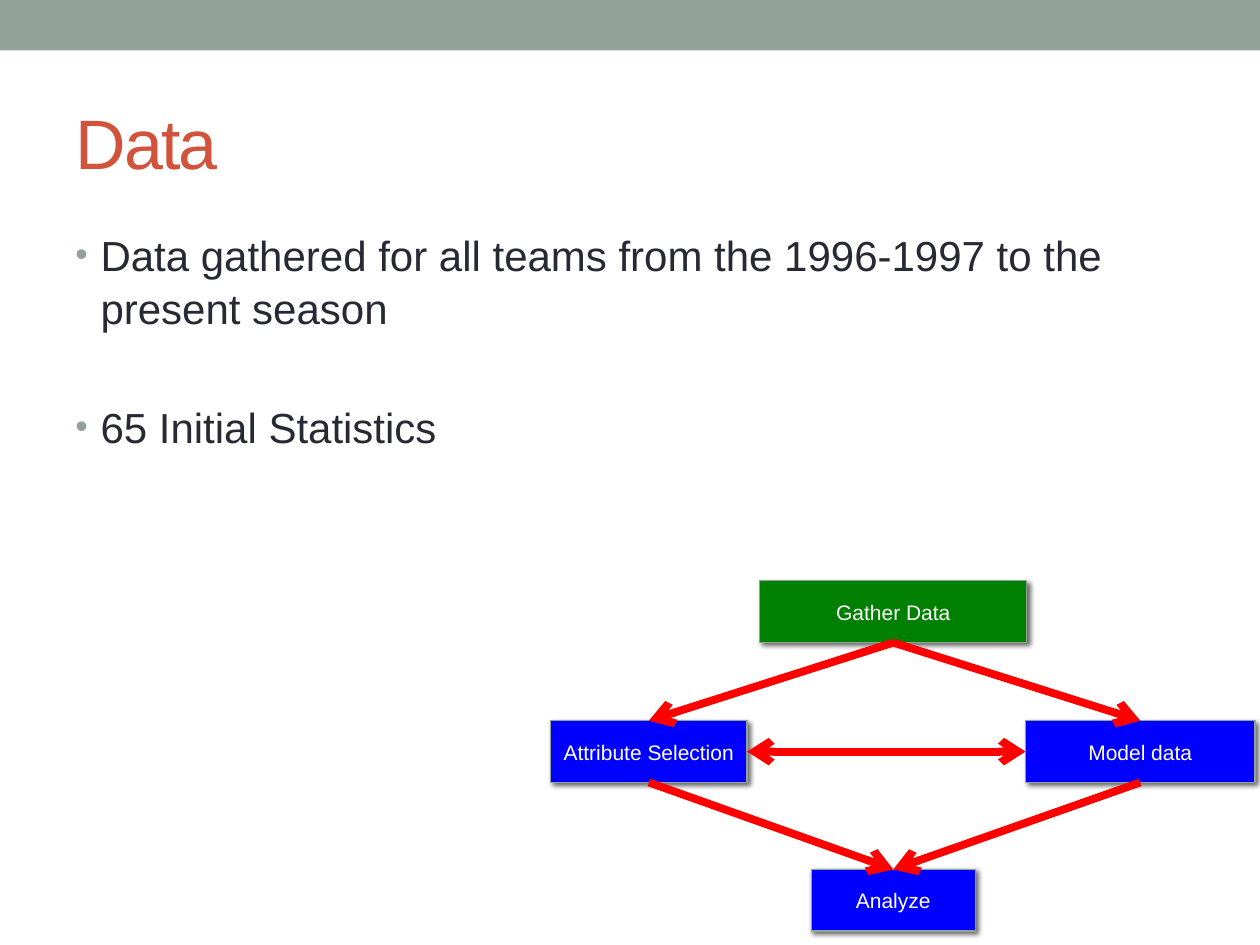
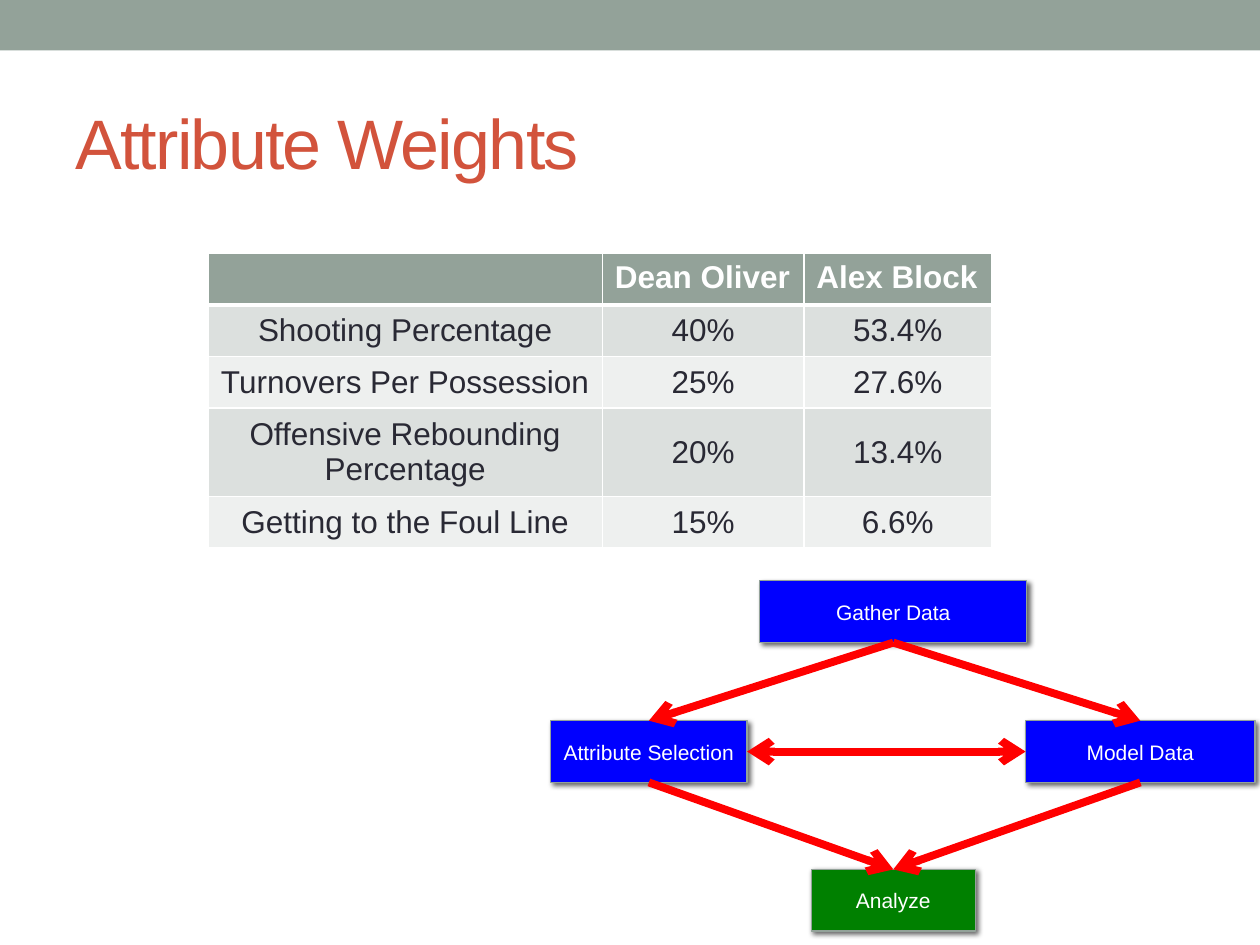
from dataclasses import dataclass
from typing import Any

from lxml import etree
from pptx import Presentation
from pptx.dml.color import RGBColor
from pptx.enum.shapes import MSO_CONNECTOR, MSO_SHAPE
from pptx.enum.text import MSO_ANCHOR, PP_ALIGN
from pptx.oxml.ns import qn
from pptx.util import Pt

EMU_PER_PX = 9144
FONT_NAME = "Arial"
RECTANGLE = MSO_SHAPE.RECTANGLE
STRAIGHT = MSO_CONNECTOR.STRAIGHT
TOP_ANCHOR = MSO_ANCHOR.TOP
MIDDLE = MSO_ANCHOR.MIDDLE
LEFT_ALIGN = PP_ALIGN.LEFT
CENTER = PP_ALIGN.CENTER
TOP, LEFT, BOTTOM, RIGHT = range(4)

COLORS = {
    "sage": "93A299",
    "title": "D2533C",
    "text": "292934",
    "white": "FFFFFF",
    "blue": "0000FF",
    "green": "008000",
    "red": "FF0000",
    "black": "000000",
    "band_dark": "DCE0DE",
    "band_light": "EEF0EF",
}

TITLE_FONT = {"name": FONT_NAME, "size": Pt(40)}
BODY_FONT = {"name": FONT_NAME, "size": Pt(24)}
STEP_FONT = {"name": FONT_NAME, "size": Pt(12)}
HEADER_FONT = {"name": FONT_NAME, "size": Pt(18), "bold": True}
CELL_FONT = {"name": FONT_NAME, "size": Pt(18), "bold": False}


@dataclass(frozen=True)
class Box:
    left: int
    top: int
    width: int
    height: int

    def emu(self) -> list[int]:
        return [px(value) for value in (self.left, self.top, self.width, self.height)]


@dataclass(frozen=True)
class Step:
    key: str
    label: str
    box: Box


@dataclass(frozen=True)
class Arrow:
    start: str
    start_side: int
    end: str
    end_side: int
    both_ends: bool = False


BAND_BOX = Box(0, 0, 1000, 40)
TITLE_BOX = Box(50, 58, 900, 108)
BODY_BOX = Box(50, 175, 900, 533)
TABLE_LEFT, TABLE_TOP = 165, 201
COLUMN_WIDTHS = (313, 160, 149)
ROW_HEIGHT = 41

STEPS = (
    Step("gather", "Gather Data", Box(603, 461, 212, 49)),
    Step("select", "Attribute Selection", Box(437, 572, 156, 49)),
    Step("model", "Model Data", Box(814, 572, 182, 49)),
    Step("analyze", "Analyze", Box(644, 690, 130, 49)),
)
ARROWS = (
    Arrow("gather", BOTTOM, "select", TOP),
    Arrow("gather", BOTTOM, "model", TOP),
    Arrow("select", RIGHT, "model", LEFT, both_ends=True),
    Arrow("select", BOTTOM, "analyze", TOP),
    Arrow("model", BOTTOM, "analyze", TOP),
)
BULLETS = (
    "Data gathered for all teams from the 1996-1997 to the present season",
    "65 Initial Statistics",
)
WEIGHTS = (
    ("", "Dean Oliver", "Alex Block"),
    ("Shooting Percentage", "40%", "53.4%"),
    ("Turnovers Per Possession", "25%", "27.6%"),
    ("Offensive Rebounding Percentage", "20%", "13.4%"),
    ("Getting to the Foul Line", "15%", "6.6%"),
)


def px(value: int) -> int:
    return value * EMU_PER_PX


def rgb(color: str) -> RGBColor:
    return RGBColor.from_string(COLORS[color])


def add_element(parent: Any, tag: str, **attributes: Any) -> Any:
    values = {name: str(value) for name, value in attributes.items()}
    return etree.SubElement(parent, qn(tag), values)


def set_values(target: Any, values: dict[str, Any]) -> None:
    for name, value in values.items():
        setattr(target, name, value)


def write_text(paragraph: Any, text: str, font: dict[str, Any], color: str) -> Any:
    run = paragraph.add_run()
    run.text = text
    set_values(run.font, font)
    run.font.color.rgb = rgb(color)
    return run


def add_rectangle(slide: Any, box: Box, fill: str) -> Any:
    shape = slide.shapes.add_shape(RECTANGLE, *box.emu())
    shape.shadow.inherit = False
    shape.fill.solid()
    shape.fill.fore_color.rgb = rgb(fill)
    shape.line.fill.background()
    return shape


def add_text_frame(slide: Any, box: Box, anchor: Any) -> Any:
    frame = slide.shapes.add_textbox(*box.emu()).text_frame
    set_values(frame, {"word_wrap": True, "vertical_anchor": anchor})
    return frame


def add_titled_slide(presentation: Any, title: str) -> Any:
    slide = presentation.slides.add_slide(presentation.slide_layouts[6])
    add_rectangle(slide, BAND_BOX, "sage")
    frame = add_text_frame(slide, TITLE_BOX, MIDDLE)
    run = write_text(frame.paragraphs[0], title, TITLE_FONT, "title")
    run.font._element.set("spc", "-100")
    return slide


def add_bullets(slide: Any) -> None:
    frame = add_text_frame(slide, BODY_BOX, TOP_ANCHOR)
    for index, text in enumerate(BULLETS):
        paragraph = frame.add_paragraph() if index else frame.paragraphs[0]
        spacing = {"line_spacing": 1.05, "space_before": Pt(38 if index else 0)}
        set_values(paragraph, spacing)
        properties = paragraph._p.get_or_add_pPr()
        properties.set("marL", str(px(20)))
        properties.set("indent", str(px(-20)))
        bullet_color = add_element(properties, "a:buClr")
        add_element(bullet_color, "a:srgbClr", val=COLORS["sage"])
        add_element(properties, "a:buSzPct", val=85000)
        add_element(properties, "a:buFont", typeface=FONT_NAME)
        add_element(properties, "a:buChar", char="•")
        write_text(paragraph, text, BODY_FONT, "text")


def add_step(slide: Any, step: Step, label: str, fill: str) -> Any:
    shape = add_rectangle(slide, step.box, fill)
    shape.line.color.rgb = rgb("sage")
    shape.line.width = Pt(0.75)
    effects = shape._element.spPr.find(qn("a:effectLst"))
    shadow = add_element(
        effects, "a:outerShdw", blurRad=Pt(3), dist=Pt(2), dir=45 * 60000, rotWithShape=0
    )
    shadow_color = add_element(shadow, "a:srgbClr", val=COLORS["black"])
    add_element(shadow_color, "a:alpha", val=60000)
    frame = shape.text_frame
    set_values(frame, {"word_wrap": True, "vertical_anchor": MIDDLE})
    frame.paragraphs[0].alignment = CENTER
    write_text(frame.paragraphs[0], label, STEP_FONT, "white")
    return shape


def add_arrow(slide: Any, arrow: Arrow, shapes: dict[str, Any]) -> None:
    connector = slide.shapes.add_connector(STRAIGHT, 0, 0, 0, 0)
    connector.begin_connect(shapes[arrow.start], arrow.start_side)
    connector.end_connect(shapes[arrow.end], arrow.end_side)
    connector.line.color.rgb = rgb("red")
    connector.line.width = Pt(4.5)
    line = connector.line._get_or_add_ln()
    if arrow.both_ends:
        add_element(line, "a:headEnd", type="arrow")
    add_element(line, "a:tailEnd", type="arrow")
    add_element(connector._element.spPr, "a:effectLst")


def add_process(slide: Any, active: str, labels: dict[str, str]) -> None:
    shapes = {}
    for step in STEPS:
        fill = "green" if step.key == active else "blue"
        shapes[step.key] = add_step(slide, step, labels.get(step.key, step.label), fill)
    for arrow in ARROWS:
        add_arrow(slide, arrow, shapes)


def set_borders(cell: Any, widths: dict[str, int]) -> None:
    properties = cell._tc.get_or_add_tcPr()
    for index, (side, width) in enumerate(widths.items()):
        border = add_element(properties, f"a:ln{side}", w=Pt(width))
        border_fill = add_element(border, "a:solidFill")
        add_element(border_fill, "a:srgbClr", val=COLORS["white"])
        properties.insert(index, border)


def add_weights_table(slide: Any) -> None:
    box = Box(TABLE_LEFT, TABLE_TOP, sum(COLUMN_WIDTHS), ROW_HEIGHT * len(WEIGHTS))
    table = slide.shapes.add_table(len(WEIGHTS), len(COLUMN_WIDTHS), *box.emu()).table
    table.horz_banding = False
    for column, width in zip(table.columns, COLUMN_WIDTHS):
        column.width = px(width)
    for row_index, values in enumerate(WEIGHTS):
        header = row_index == 0
        band = "band_dark" if row_index % 2 else "band_light"
        for column_index, value in enumerate(values):
            cell = table.cell(row_index, column_index)
            cell.fill.solid()
            cell.fill.fore_color.rgb = rgb("sage" if header else band)
            cell.vertical_anchor = TOP_ANCHOR if header else MIDDLE
            top_width = 3 if row_index == 1 else 1
            bottom_width = 3 if header else 1
            set_borders(cell, {"L": 1, "R": 1, "T": top_width, "B": bottom_width})
            paragraph = cell.text_frame.paragraphs[0]
            paragraph.alignment = LEFT_ALIGN if header else CENTER
            if value:
                font = HEADER_FONT if header else CELL_FONT
                write_text(paragraph, value, font, "white" if header else "text")


def main() -> None:
    presentation = Presentation()
    presentation.slide_width = px(1000)
    presentation.slide_height = px(750)

    data_slide = add_titled_slide(presentation, "Data")
    add_bullets(data_slide)
    add_process(data_slide, "gather", {"model": "Model data"})

    weights_slide = add_titled_slide(presentation, "Attribute Weights")
    add_weights_table(weights_slide)
    add_process(weights_slide, "analyze", {})

    presentation.save("out.pptx")


if __name__ == "__main__":
    main()
